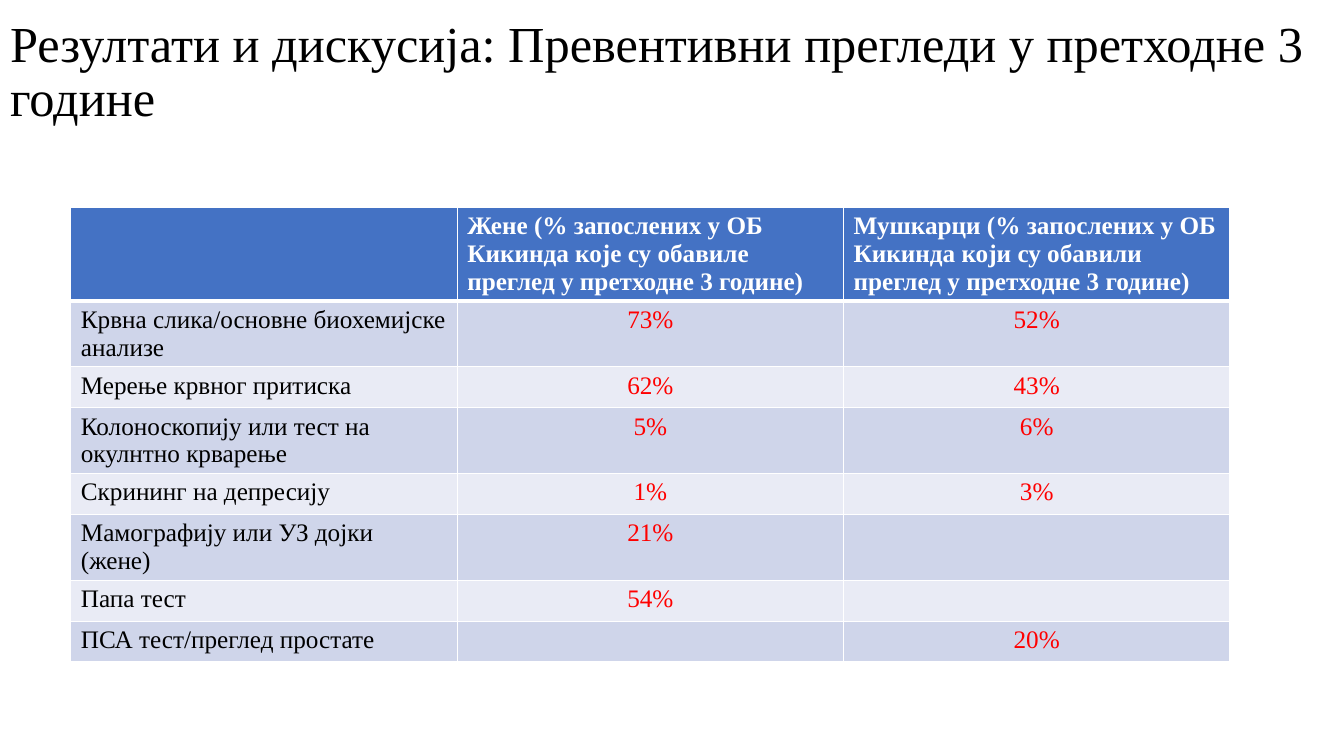
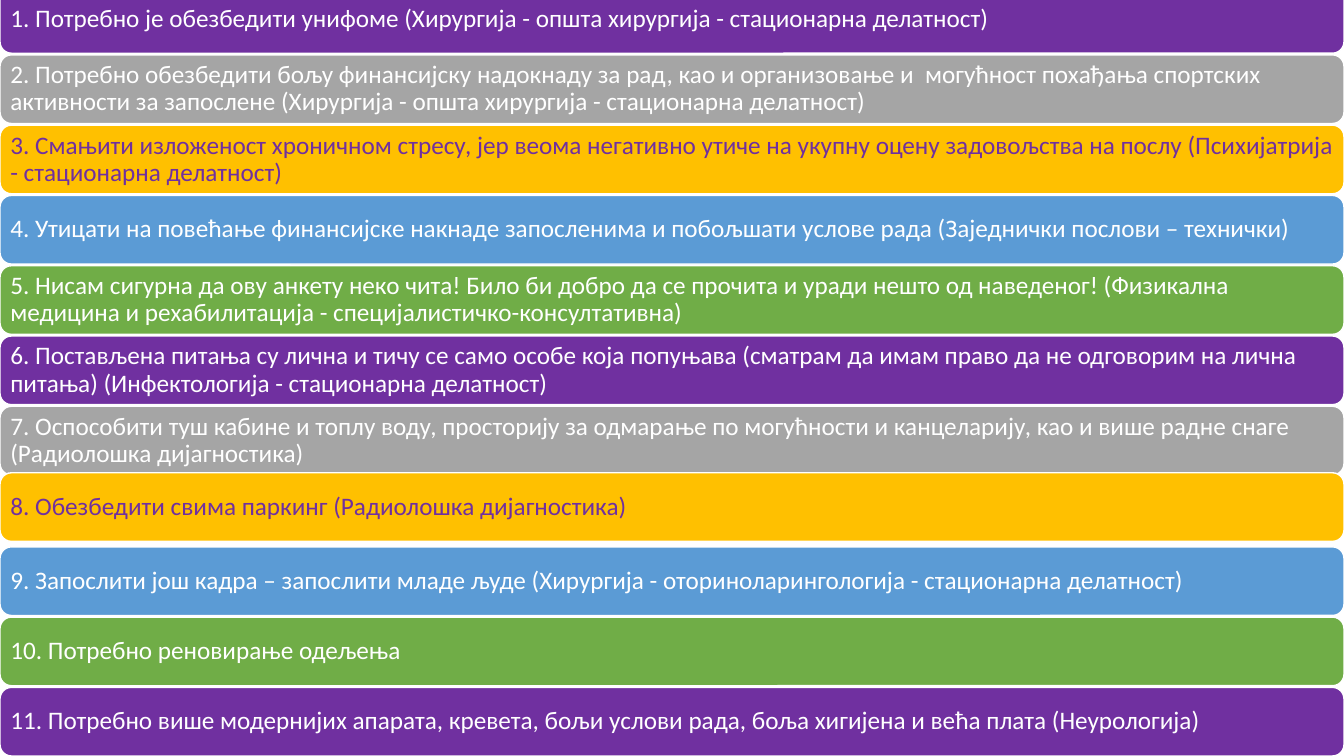
"""Build two slides: a table of preventive check-ups and a list of staff suggestions."""
from lxml import etree
from pptx import Presentation
from pptx.dml.color import RGBColor
from pptx.enum.shapes import MSO_SHAPE
from pptx.enum.text import MSO_ANCHOR, MSO_AUTO_SIZE, PP_ALIGN
from pptx.oxml.ns import qn
from pptx.util import Pt

LEFT, CENTER = PP_ALIGN.LEFT, PP_ALIGN.CENTER
MIDDLE = MSO_ANCHOR.MIDDLE
NO_AUTOFIT = MSO_AUTO_SIZE.NONE
ROUNDED = MSO_SHAPE.ROUNDED_RECTANGLE

BLACK = RGBColor(0x00, 0x00, 0x00)
WHITE = RGBColor(0xFF, 0xFF, 0xFF)
RED = RGBColor(0xFF, 0x00, 0x00)
HEADER_BLUE = RGBColor(0x44, 0x72, 0xC4)
BAND_DARK = RGBColor(0xCF, 0xD5, 0xEA)
BAND_LIGHT = RGBColor(0xE9, 0xEB, 0xF5)
PURPLE = RGBColor(0x70, 0x30, 0xA0)
GRAY = RGBColor(0xA5, 0xA5, 0xA5)
GOLD = RGBColor(0xFF, 0xC0, 0x00)
BLUE = RGBColor(0x5B, 0x9B, 0xD5)
GREEN = RGBColor(0x70, 0xAD, 0x47)

SERIF, SANS = "Times New Roman", "Calibri"
SLIDE_WIDTH, SLIDE_HEIGHT = 960, 540


def write_text(frame, text, font=SERIF, size=18, color=BLACK, bold=False,
               align=LEFT, spacing=1.0):
    paragraph = frame.paragraphs[0]
    paragraph.alignment = align
    paragraph.line_spacing = spacing
    run = paragraph.add_run()
    run.text = text
    run.font.name = font
    run.font.size = Pt(size)
    run.font.bold = bold
    run.font.color.rgb = color


def add_borders(cell, top, bottom):
    properties = cell._tc.get_or_add_tcPr()
    for side, width in (("L", 1), ("R", 1), ("T", top), ("B", bottom)):
        line = etree.SubElement(properties, qn(f"a:ln{side}"), w=str(Pt(width)))
        fill = etree.SubElement(line, qn("a:solidFill"))
        etree.SubElement(fill, qn("a:srgbClr"), val=str(WHITE))


presentation = Presentation()
presentation.slide_width = Pt(SLIDE_WIDTH)
presentation.slide_height = Pt(SLIDE_HEIGHT)
title_only, blank = presentation.slide_layouts[5], presentation.slide_layouts[6]

slide = presentation.slides.add_slide(title_only)
title = slide.shapes.title
title.left, title.top, title.width, title.height = Pt(0), Pt(0), Pt(SLIDE_WIDTH), Pt(104.4)
title.text_frame.auto_size = NO_AUTOFIT
title.text_frame.word_wrap = True
title.text_frame.vertical_anchor = MIDDLE
write_text(title.text_frame,
           "Резултати и дискусија: Превентивни прегледи у претходне 3 године",
           size=36, spacing=0.9)

checkups = [
    ("",
     "Жене (% запослених у ОБ Кикинда које су обавиле преглед у претходне 3 године)",
     "Мушкарци (% запослених у ОБ Кикинда који су обавили преглед у претходне 3 године)"),
    ("Крвна слика/основне биохемијске анализе", "73%", "52%"),
    ("Мерење крвног притиска", "62%", "43%"),
    ("Колоноскопију или тест на окулнтно крварење", "5%", "6%"),
    ("Скрининг на депресију", "1%", "3%"),
    ("Мамографију или УЗ дојки (жене)", "21%", ""),
    ("Папа тест", "54%", ""),
    ("ПСА тест/преглед простате", "", "20%"),
]
ROW_HEIGHT = 29.2
table = slide.shapes.add_table(len(checkups), 3, Pt(50.6), Pt(147.8), Pt(828),
                               Pt(ROW_HEIGHT * len(checkups))).table
for row_index, row in enumerate(checkups):
    is_header = row_index == 0
    table.rows[row_index].height = Pt(ROW_HEIGHT)
    for column_index, text in enumerate(row):
        cell = table.cell(row_index, column_index)
        add_borders(cell, top=3 if row_index == 1 else 1, bottom=3 if is_header else 1)
        cell.fill.solid()
        if is_header:
            cell.fill.fore_color.rgb = HEADER_BLUE
        else:
            cell.fill.fore_color.rgb = BAND_DARK if row_index % 2 else BAND_LIGHT
        if not text:
            continue
        if is_header:
            write_text(cell.text_frame, text, color=WHITE, bold=True)
        elif column_index == 0:
            write_text(cell.text_frame, text)
        else:
            write_text(cell.text_frame, text, color=RED, align=CENTER)

slide = presentation.slides.add_slide(blank)
suggestions = [
    "1. Потребно је обезбедити унифоме (Хирургија - општа хирургија - стационарна делатност)",
    "2. Потребно обезбедити бољу финансијску надокнаду за рад, као и организовање и  могућност "
    "похађања спортских активности за запослене (Хирургија - општа хирургија - стационарна делатност)",
    "3. Смањити изложеност хроничном стресу, јер веома негативно утиче на укупну оцену "
    "задовољства на послу (Психијатрија - стационарна делатност)",
    "4. Утицати на повећање финансијске накнаде запосленима и побољшати услове рада "
    "(Заједнички послови – технички)",
    "5. Нисам сигурна да ову анкету неко чита! Било би добро да се прочита и уради нешто од "
    "наведеног! (Физикална медицина и рехабилитација - специјалистичко-консултативна)",
    "6. Постављена питања су лична и тичу се само особе која попуњава (сматрам да имам право да "
    "не одговорим на лична питања) (Инфектологија - стационарна делатност)",
    "7. Оспособити туш кабине и топлу воду, просторију за одмарање по могућности и канцеларију, "
    "као и више радне снаге (Радиолошка дијагностика)",
    "8. Обезбедити свима паркинг (Радиолошка дијагностика)",
    "9. Запослити још кадра – запослити младе људе (Хирургија - оториноларингологија - "
    "стационарна делатност)",
    "10. Потребно реновирање одељења",
    "11. Потребно више модернијих апарата, кревета, бољи услови рада, боља хигијена и већа плата "
    "(Неурологија)",
]
BAR_COLORS = [PURPLE, GRAY, GOLD, BLUE, GREEN]
BAR_HEIGHT, BAR_PITCH, FIRST_TOP = 49, 50.2, -11
RAISED_BAR, RAISE = 7, 2.7
for index, suggestion in enumerate(suggestions):
    color = BAR_COLORS[index % len(BAR_COLORS)]
    top = FIRST_TOP + index * BAR_PITCH - (RAISE if index == RAISED_BAR else 0)
    bar = slide.shapes.add_shape(ROUNDED, Pt(0), Pt(top), Pt(SLIDE_WIDTH), Pt(BAR_HEIGHT))
    bar.shadow.inherit = False
    bar.fill.solid()
    bar.fill.fore_color.rgb = color
    bar.line.color.rgb = WHITE
    bar.line.width = Pt(1)
    frame = bar.text_frame
    frame.word_wrap = True
    frame.vertical_anchor = MIDDLE
    frame.margin_left = frame.margin_right = frame.margin_top = frame.margin_bottom = Pt(5)
    write_text(frame, suggestion, font=SANS, color=PURPLE if color == GOLD else WHITE,
               spacing=0.9)

presentation.save("out.pptx")
